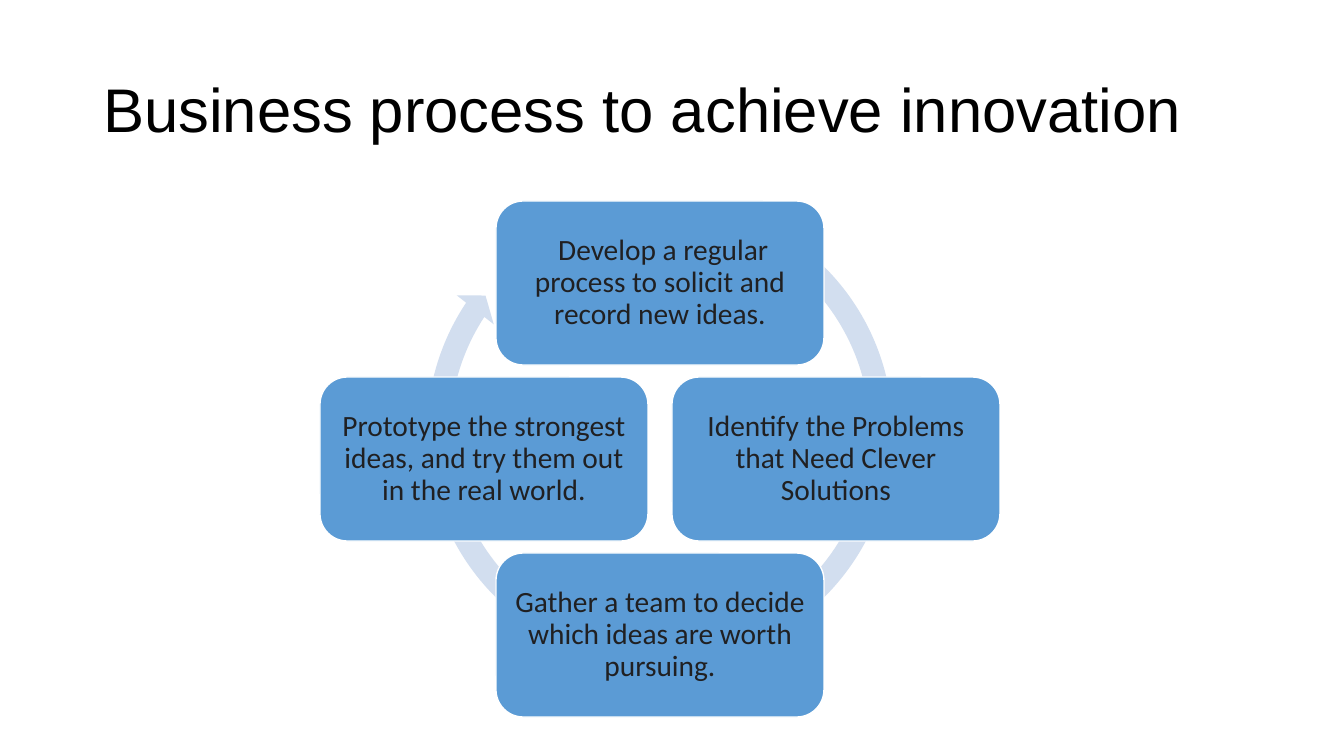
import pptx
import pptx.util
import pptx.dml.color
import pptx.enum.shapes
import pptx.enum.text

RGB = pptx.dml.color.RGBColor
BLACK = RGB(0x00, 0x00, 0x00)
WHITE = RGB(0xFF, 0xFF, 0xFF)
INK = RGB(0x20, 0x20, 0x22)
BLUE = RGB(0x5B, 0x9B, 0xD5)
PALE = RGB(0xD2, 0xDE, 0xEF)
KIND = pptx.enum.shapes.MSO_SHAPE
ALIGN = pptx.enum.text.PP_ALIGN


def px(*sizes):
    return [pptx.util.Emu(round(size * 914400 / 100.8)) for size in sizes]


def write(frame, text, font, size, color, align):
    frame.text = text
    frame.word_wrap = True
    frame.auto_size = pptx.enum.text.MSO_AUTO_SIZE.NONE
    frame.vertical_anchor = pptx.enum.text.MSO_ANCHOR.MIDDLE
    para = frame.paragraphs[0]
    para.alignment = align
    para.line_spacing = 0.9
    face = para.runs[0].font
    face.name = font
    face.size = pptx.util.Pt(size)
    face.color.rgb = color


deck = pptx.Presentation()
deck.slide_width, deck.slide_height = px(1344, 756)
slide = deck.slides.add_slide(deck.slide_layouts[5])

# Title
title = slide.shapes.title
title.left, title.top, title.width, title.height = px(93, 40, 1159, 146)
write(title.text_frame, "Business process to achieve innovation",
      "Arial", 44, BLACK, ALIGN.LEFT)

# Ring arrow behind the steps
cycle = slide.shapes.add_group_shape()
ring = cycle.shapes.add_shape(KIND.CIRCULAR_ARROW, *px(415, 187, 490, 490))
for i, value in enumerate([0.047, 2.729, 128.087, 180.464, 0.048]):
    ring.adjustments[i] = value
ring.shadow.inherit = False
ring.fill.solid()
ring.fill.fore_color.rgb = PALE
ring.line.fill.background()

# Four steps, clockwise from the top, at equal distance from the middle
MID_X, MID_Y, STEP = 660, 459, 176
WIDE, HIGH, INSET = 328, 164, 9
steps = [
    (0, -1, " Develop a regular process to solicit and record new ideas."),
    (1, 0, "Identify the Problems that Need Clever Solutions"),
    (0, 1, "Gather a team to decide which ideas are worth pursuing."),
    (-1, 0, "Prototype the strongest ideas, and try them out in the real world."),
]
for col, row, text in steps:
    left = MID_X + col * STEP - WIDE // 2
    top = MID_Y + row * STEP - HIGH // 2
    box = cycle.shapes.add_shape(KIND.ROUNDED_RECTANGLE,
                                 *px(left, top, WIDE, HIGH))
    box.shadow.inherit = False
    box.fill.solid()
    box.fill.fore_color.rgb = BLUE
    box.line.color.rgb = WHITE
    box.line.width = pptx.util.Pt(1)
    frame = box.text_frame
    (frame.margin_left, frame.margin_top,
     frame.margin_right, frame.margin_bottom) = px(*[INSET] * 4)
    write(frame, text, "Calibri", 21, INK, ALIGN.CENTER)

deck.save("out.pptx")
